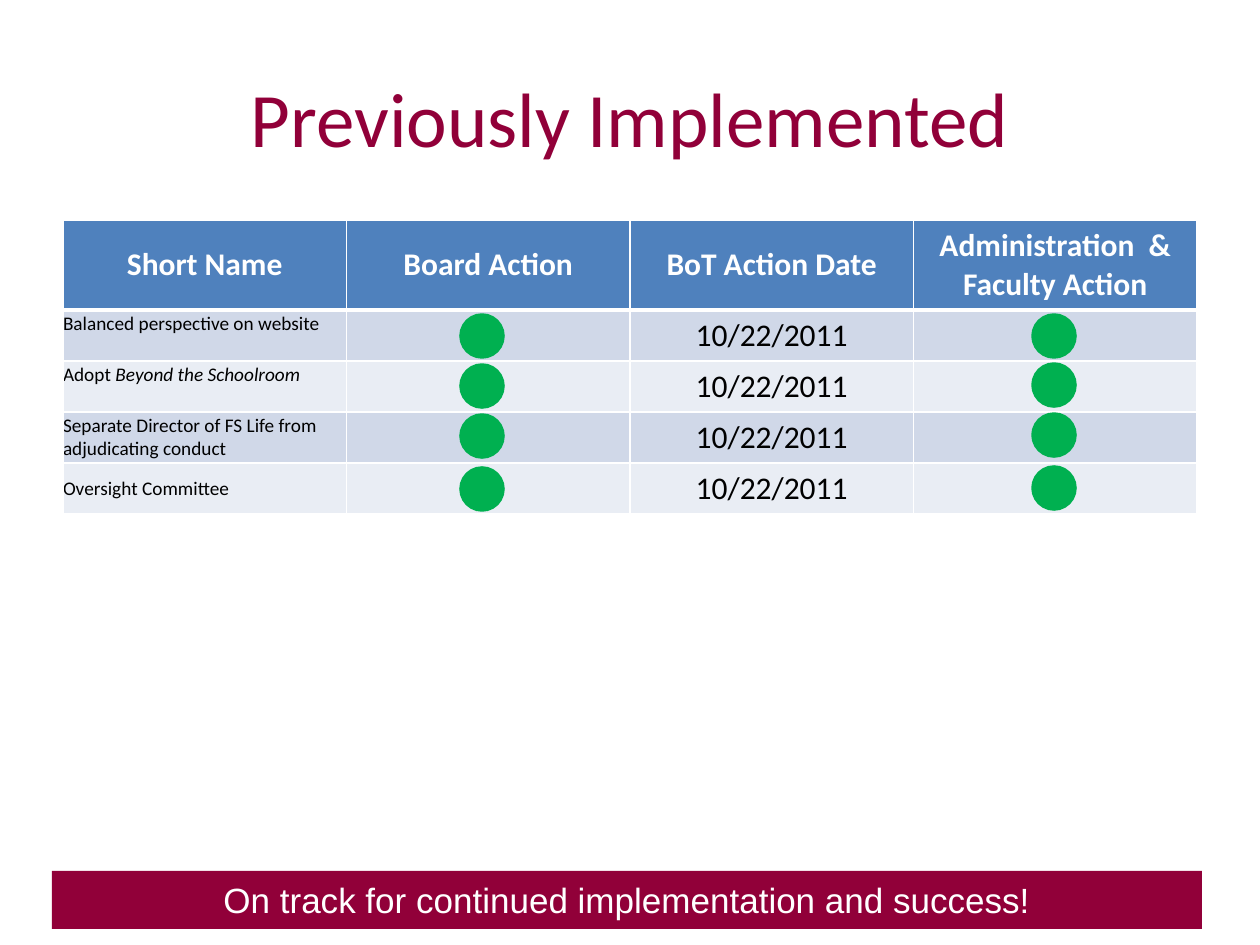
from lxml import etree
from pptx import Presentation
from pptx.dml.color import RGBColor
from pptx.enum.shapes import MSO_SHAPE
from pptx.enum.text import MSO_ANCHOR, PP_ALIGN
from pptx.oxml.ns import qn
from pptx.util import Pt

SCALE = 914400 / 126
CENTER, LEFT = PP_ALIGN.CENTER, PP_ALIGN.LEFT
TOP, MIDDLE, BOTTOM = MSO_ANCHOR.TOP, MSO_ANCHOR.MIDDLE, MSO_ANCHOR.BOTTOM
OVAL, RECTANGLE = MSO_SHAPE.OVAL, MSO_SHAPE.RECTANGLE
COLORS = {
    "maroon": "910039",
    "header": "4F81BD",
    "odd": "D0D8E8",
    "even": "E9EDF4",
    "done": "00B050",
    "white": "FFFFFF",
    "black": "000000",
}
FORMATS = {
    "title": {"name": "Calibri", "size": Pt(44), "color": "maroon"},
    "header": {"name": "Calibri", "size": Pt(18), "bold": True, "color": "white"},
    "name": {"name": "Calibri", "size": Pt(11), "bold": False, "color": "black"},
    "date": {"name": "Calibri", "size": Pt(18), "bold": False, "color": "black"},
    "banner": {"name": "Arial", "size": Pt(20), "color": "white"},
}


def px(*lengths):
    return [round(length * SCALE) for length in lengths]


def write(holder, runs, style, align=CENTER, anchor=MIDDLE):
    holder.vertical_anchor = anchor
    paragraph = holder.text_frame.paragraphs[0] if hasattr(holder, "text_frame") else holder.paragraphs[0]
    paragraph.alignment = align
    for text, italic in runs:
        run = paragraph.add_run()
        run.text = text
        run.font.italic = italic
        for attribute, value in FORMATS[style].items():
            if attribute == "color":
                run.font.color.rgb = RGBColor.from_string(COLORS[value])
            else:
                setattr(run.font, attribute, value)


deck = Presentation()
deck.slide_width, deck.slide_height = px(1260, 945)
slide = deck.slides.add_slide(deck.slide_layouts[6])

title = slide.shapes.add_textbox(*px(63, 38, 1134, 158))
title.text_frame.word_wrap = True
write(title.text_frame, [("Previously Implemented", False)], "title")

headings = ["Short Name", "Board Action", "BoT Action Date", "Administration  & Faculty Action"]
measures = [
    ([("Balanced perspective on website", False)], TOP),
    ([("Adopt ", False), ("Beyond the Schoolroom", True)], TOP),
    ([("Separate Director of FS Life from adjudicating conduct", False)], MIDDLE),
    ([("Oversight Committee", False)], MIDDLE),
]
progress = slide.shapes.add_table(5, 4, *px(63, 220, 1134, 294)).table
for index, row in enumerate(progress.rows):
    row.height = px(51 if index else 90)[0]

for column, heading in enumerate(headings):
    write(progress.cell(0, column), [(heading, False)], "header")

for row, (name, anchor) in enumerate(measures, start=1):
    name_cell = progress.cell(row, 0)
    margins = {
        "margin_left": 0,
        "margin_right": 0,
        "margin_top": px(2)[0] if anchor == TOP else 0,
        "margin_bottom": 0,
    }
    for attribute, value in margins.items():
        setattr(name_cell, attribute, value)
    write(name_cell, name, "name", LEFT, anchor)
    write(progress.cell(row, 2), [("10/22/2011", False)], "date")

for row in range(5):
    band = "header" if row == 0 else "odd" if row % 2 else "even"
    for column in range(4):
        cell = progress.cell(row, column)
        cell.fill.solid()
        cell.fill.fore_color.rgb = RGBColor.from_string(COLORS[band])
        borders = {"a:lnL": 1, "a:lnR": 1, "a:lnT": 3 if row == 1 else 1, "a:lnB": 1 if row else 3}
        properties = cell._tc.get_or_add_tcPr()
        for position, (side, width) in enumerate(borders.items()):
            border = etree.Element(qn(side), w=str(Pt(width)))
            fill = etree.SubElement(border, qn("a:solidFill"))
            etree.SubElement(fill, qn("a:srgbClr"), val=COLORS["white"])
            properties.insert(position, border)

status_tops = {461: [315, 365, 415, 468], 1033: [315, 364, 414, 467]}
for left, tops in status_tops.items():
    for top in tops:
        status = slide.shapes.add_shape(OVAL, *px(left, top, 42, 42))
        status.shadow.inherit = False
        status.fill.solid()
        status.fill.fore_color.rgb = RGBColor.from_string(COLORS["done"])
        status.line.color.rgb = RGBColor.from_string(COLORS["done"])
        status.line.width = Pt(2)

banner = slide.shapes.add_shape(RECTANGLE, *px(52, 871, 1150, 58))
banner.shadow.inherit = False
banner.fill.solid()
banner.fill.fore_color.rgb = RGBColor.from_string(COLORS["maroon"])
banner.line.fill.background()
banner.text_frame.word_wrap = True
banner.text_frame.margin_bottom = px(8)[0]
write(
    banner.text_frame,
    [("On track for continued implementation and success!", False)],
    "banner",
    anchor=BOTTOM,
)

deck.save("out.pptx")
